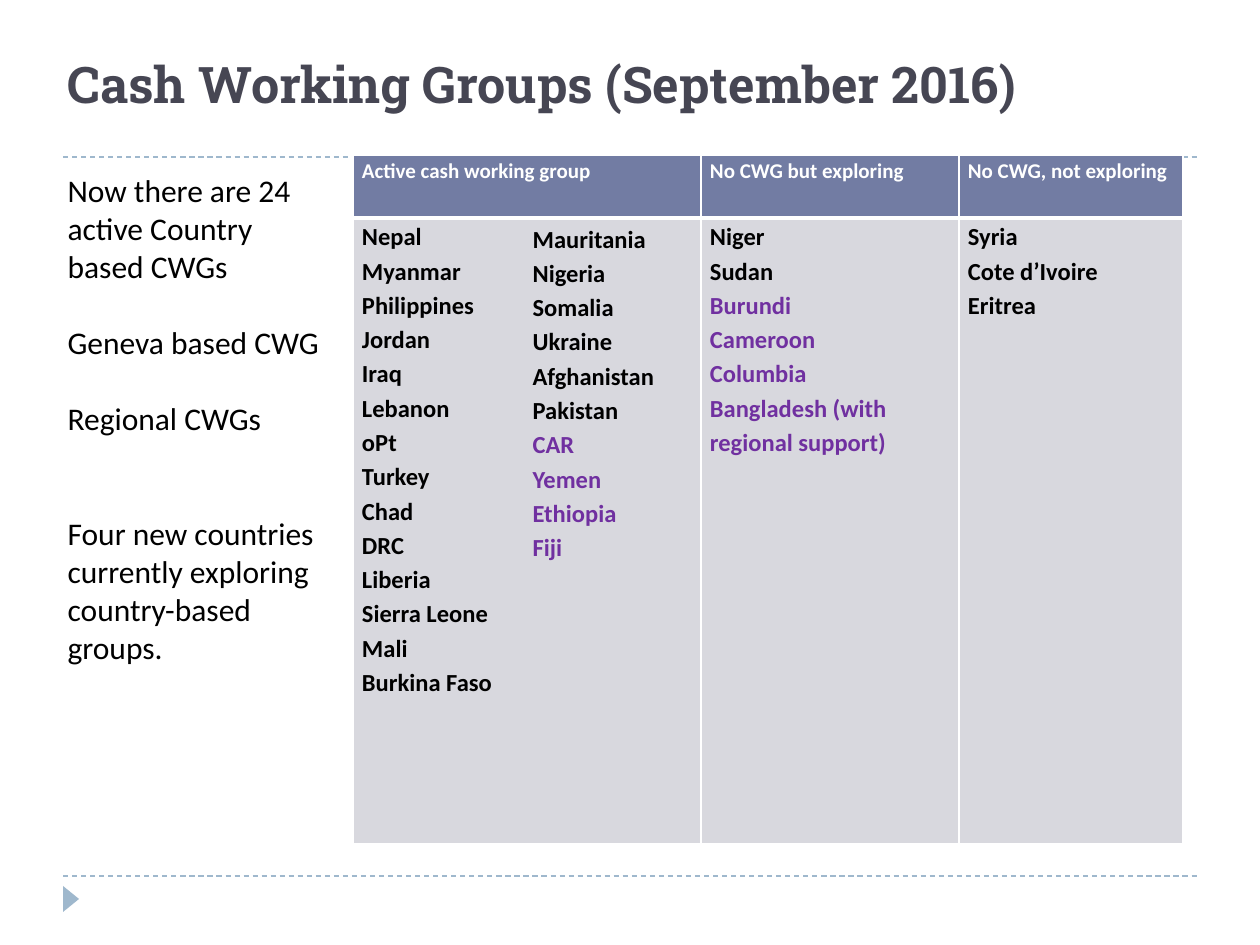
from lxml.etree import SubElement
from pptx import Presentation
from pptx.dml.color import RGBColor
from pptx.enum.dml import MSO_LINE
from pptx.enum.shapes import MSO_CONNECTOR, MSO_SHAPE
from pptx.enum.text import MSO_ANCHOR, MSO_AUTO_SIZE, PP_ALIGN
from pptx.oxml import parse_xml
from pptx.oxml.ns import nsdecls, qn
from pptx.util import Pt

PX = 914400 / 126
BLACK = RGBColor(0x00, 0x00, 0x00)
WHITE = RGBColor(0xFF, 0xFF, 0xFF)
PURPLE = RGBColor(0x70, 0x30, 0xA0)
SLATE = RGBColor(0x46, 0x46, 0x53)
HEADER = RGBColor(0x72, 0x7C, 0xA3)
BODY = RGBColor(0xD8, 0xD8, 0xDE)
ACCENT = RGBColor(0x9F, 0xB8, 0xCD)
NO_STYLE = "{2D5ABB26-0587-4C30-8999-92F81FD0307C}"


def box(*lengths):
    return [round(n * PX) for n in lengths]


def write(p, text, size, color, bold=True, font="Calibri"):
    r = p.add_run()
    r.text = text
    r.font.name = font
    r.font.size = Pt(size)
    r.font.bold = bold
    r.font.color.rgb = color


prs = Presentation()
prs.slide_width, prs.slide_height = box(1260, 945)
s = prs.slides.add_slide(prs.slide_layouts[1])

for y in (876, 157):
    line = s.shapes.add_connector(MSO_CONNECTOR.STRAIGHT, *box(63, y, 1197, y))
    line.line.color.rgb = ACCENT
    line.line.width = Pt(0.75)
    line.line.dash_style = MSO_LINE.DASH
    SubElement(line._element.spPr, qn("a:effectLst"))

marker = s.shapes.add_shape(MSO_SHAPE.ISOSCELES_TRIANGLE, *box(58, 891, 26, 16))
marker.rotation = 90
marker.shadow.inherit = False
marker.fill.solid()
marker.fill.fore_color.rgb = ACCENT
marker.line.fill.background()

title, body = s.placeholders
title.left, title.top, title.width, title.height = box(55, 20, 1134, 158)
tf = title.text_frame
tf.auto_size = MSO_AUTO_SIZE.NONE
tf.vertical_anchor = MSO_ANCHOR.BOTTOM
tf.margin_bottom = box(64)[0]
p = tf.paragraphs[0]
p.alignment = PP_ALIGN.LEFT
write(p, "Cash Working Groups (September 2016)", 28.8, SLATE, font="Roboto Slab")

body.left, body.top, body.width, body.height = box(55, 165, 289, 662)
tf = body.text_frame
tf.auto_size = MSO_AUTO_SIZE.NONE
notes = [
    ("Now there are 24 active Country based CWGs", 0),
    ("Geneva based CWG", 22),
    ("Regional CWGs", 22),
    ("Four new countries currently exploring country-based groups.", 44),
]
for i, (text, gap) in enumerate(notes):
    p = tf.add_paragraph() if i else tf.paragraphs[0]
    p.space_before = Pt(gap)
    pPr = p._p.get_or_add_pPr()
    pPr.set("marL", "0")
    pPr.set("indent", "0")
    SubElement(pPr, qn("a:buNone"))
    write(p, text, 18, BLACK, bold=False)

groups = [
    ("Active cash working group", 348,
     ["Nepal", "Myanmar", "Philippines", "Jordan", "Iraq", "Lebanon", "oPt",
      "Turkey", "Chad", "DRC", "Liberia", "Sierra Leone", "Mali", "Burkina Faso"], []),
    ("No CWG but exploring", 258, ["Niger", "Sudan"],
     ["Burundi", "Cameroon", "Columbia", "Bangladesh (with regional support)"]),
    ("No CWG, not exploring", 224, ["Syria", "Cote d’Ivoire", "Eritrea"], []),
]
more_active = (["Mauritania", "Nigeria", "Somalia", "Ukraine", "Afghanistan", "Pakistan"],
               ["CAR", "Yemen", "Ethiopia", "Fiji"])

main = s.shapes.add_table(2, 3, *box(353, 155, 830, 689)).table
extra = s.shapes.add_table(1, 1, *box(520, 214, 179, 616)).table
for table in (main, extra):
    table.first_row = table.horz_banding = False
    table._tbl.tblPr.find(qn("a:tableStyleId")).text = NO_STYLE
main.rows[0].height, main.rows[1].height = box(63, 626)

cells = []
for col, (heading, width, known, new) in enumerate(groups):
    main.columns[col].width = box(width)[0]
    cells.append((main.cell(0, col), [(heading, WHITE)], 12, HEADER, (1, 1, 1, 3)))
    countries = [(name, BLACK) for name in known] + [(name, PURPLE) for name in new]
    cells.append((main.cell(1, col), countries, 14, BODY, (1, 1, 3, 1)))
countries = [(name, BLACK) for name in more_active[0]] + [(name, PURPLE) for name in more_active[1]]
cells.append((extra.cell(0, 0), countries, 14, None, ()))

for cell, entries, size, fill, borders in cells:
    if fill is None:
        cell.fill.background()
    else:
        cell.fill.solid()
        cell.fill.fore_color.rgb = fill
        cell.margin_left = cell.margin_right = box(9)[0]
        cell.margin_top = cell.margin_bottom = 0
    tcPr = cell._tc.get_or_add_tcPr()
    for i, (side, points) in enumerate(zip("LRTB", borders)):
        tcPr.insert(i, parse_xml(
            f'<a:ln{side} {nsdecls("a")} w="{Pt(points)}"><a:solidFill>'
            f'<a:srgbClr val="{WHITE}"/></a:solidFill></a:ln{side}>'))
    for i, (text, color) in enumerate(entries):
        p = cell.text_frame.add_paragraph() if i else cell.text_frame.paragraphs[0]
        p.line_spacing = 1.15
        write(p, text, size, color)

prs.save("out.pptx")
